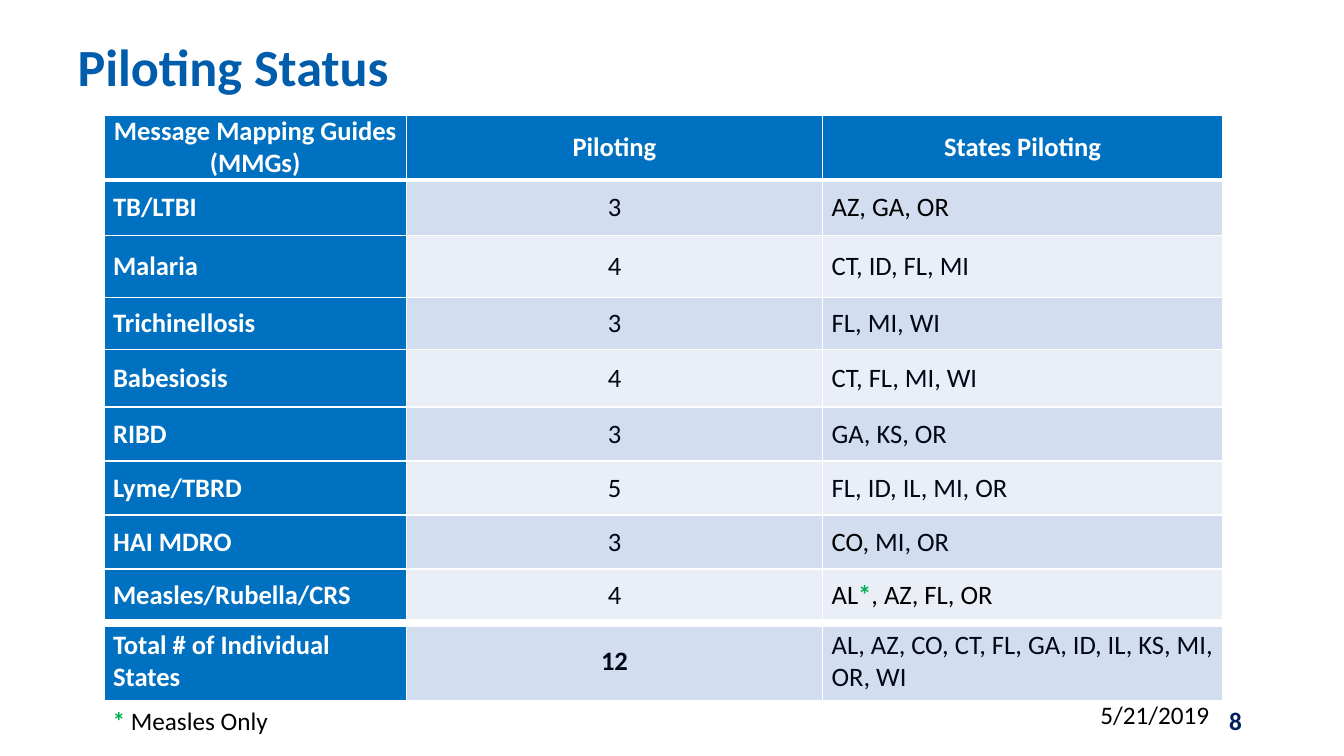
from lxml.etree import SubElement
from pptx import Presentation
from pptx.dml.color import RGBColor
from pptx.enum.text import MSO_ANCHOR, MSO_AUTO_SIZE, PP_ALIGN
from pptx.oxml.ns import qn
from pptx.util import Cm, Pt

HUES = {
    "title": "005DAB", "head": "0070C0", "odd": "D2DEEF", "even": "EAEFF7",
    "white": "FFFFFF", "black": "000000", "ink": "000818",
    "star": "00B050", "navy": "002060",
}
HEADS = ["Message Mapping Guides (MMGs)", "Piloting", "States Piloting"]
GUIDES = [
    ("TB/LTBI", "3", [("AZ, GA, OR", "black", False)]),
    ("Malaria", "4", [("CT, ID, FL, MI", "ink", False)]),
    ("Trichinellosis", "3", [("FL, MI, WI", "ink", False)]),
    ("Babesiosis", "4", [("CT, FL, MI, WI", "ink", False)]),
    ("RIBD", "3", [("GA, KS, OR", "ink", False)]),
    ("Lyme/TBRD", "5", [("FL, ID, IL, MI, OR", "ink", False)]),
    ("HAI MDRO", "3", [("CO, ", "black", False), ("MI, OR", "ink", False)]),
    ("Measles/Rubella/CRS", "4", [
        ("AL", "black", False), ("*", "star", True), (", AZ, FL, OR", "black", False)]),
    ("Total # of Individual States", "12", [
        ("AL, AZ, CO, CT, FL, GA, ID, IL, KS, MI, OR, WI", "ink", False)]),
]
WIDTHS = [7.62, 10.49, 10.08]
HEIGHTS = [1.53, 1.4, 1.57, 1.32, 1.44, 1.36, 1.36, 1.36, 1.36, 1.96]


def color(name):
    """Return the named colour."""
    return RGBColor.from_string(HUES[name])


def write(frame, runs, size, align=PP_ALIGN.LEFT):
    """Fill the first paragraph with (text, colour, bold) runs."""
    para = frame.paragraphs[0]
    para.alignment = align
    for text, hue, bold in runs:
        run = para.add_run()
        run.text = text
        font = run.font
        font.name, font.size, font.bold = "Calibri", Pt(size), bold
        font.color.rgb = color(hue)
    return para


def add_title(slide, text):
    """Place and format the title placeholder."""
    title = slide.shapes.title
    title.left, title.top, title.width, title.height = Cm(1.7), Cm(0.76), Cm(30.48), Cm(1.8)
    frame = title.text_frame
    frame.auto_size = MSO_AUTO_SIZE.NONE
    frame.vertical_anchor = MSO_ANCHOR.BOTTOM
    write(frame, [(text, "title", True)], 37.3).line_spacing = Pt(40)


def add_note(slide, left, top, width, runs, align=PP_ALIGN.LEFT, anchor=MSO_ANCHOR.TOP):
    """Add a one-line text box at the foot of the slide."""
    box = slide.shapes.add_textbox(Cm(left), Cm(top), Cm(width), Cm(1.02))
    frame = box.text_frame
    frame.word_wrap = True
    frame.vertical_anchor = anchor
    write(frame, runs, 18, align)


def add_edges(cell, top, bottom):
    """Draw white cell borders with the given top and bottom widths."""
    props = cell._tc.get_or_add_tcPr()
    for side, width in (("L", 1), ("R", 1), ("T", top), ("B", bottom)):
        line = SubElement(props, qn(f"a:ln{side}"), w=str(Pt(width)))
        fill = SubElement(line, qn("a:solidFill"))
        SubElement(fill, qn("a:srgbClr"), val=HUES["white"])


def fill_cell(cell, runs, hue, align, top, bottom):
    """Set the text, borders and fill of a cell."""
    cell.margin_left = cell.margin_right = Cm(0.23)
    cell.margin_top = cell.margin_bottom = 0
    cell.vertical_anchor = MSO_ANCHOR.MIDDLE
    write(cell.text_frame, runs, 19, align)
    add_edges(cell, top, bottom)
    cell.fill.solid()
    cell.fill.fore_color.rgb = color(hue)


def add_grid(slide):
    """Add the table of guides and piloting states."""
    rows = [[[(head, "white", True)] for head in HEADS]]
    last = len(GUIDES)
    for num, (guide, count, states) in enumerate(GUIDES, 1):
        rows.append([[(guide, "white", True)], [(count, "ink", num == last)], states])
    table = slide.shapes.add_table(
        len(rows), len(HEADS), Cm(2.62), Cm(2.9), Cm(sum(WIDTHS)), Cm(sum(HEIGHTS))).table
    for col, width in zip(table.columns, WIDTHS):
        col.width = Cm(width)
    rules = {1: 3, last: 6}
    for y, row in enumerate(rows):
        table.rows[y].height = Cm(HEIGHTS[y])
        band = "odd" if y % 2 else "even"
        for x, runs in enumerate(row):
            hue = "head" if y == 0 or x == 0 else band
            align = PP_ALIGN.CENTER if y == 0 or x == 1 else PP_ALIGN.LEFT
            fill_cell(table.cell(y, x), runs, hue, align, rules.get(y, 1), rules.get(y + 1, 1))


def main():
    """Build and save the slide."""
    deck = Presentation()
    deck.slide_width, deck.slide_height = Cm(33.87), Cm(19.05)
    slide = deck.slides.add_slide(deck.slide_layouts[5])
    add_title(slide, "Piloting Status")
    add_grid(slide)
    add_note(slide, 27.48, 17.5, 4.27, [("5/21/2019", "black", False)])
    add_note(slide, 23.93, 17.65, 7.62, [("8", "navy", True)], PP_ALIGN.RIGHT, MSO_ANCHOR.MIDDLE)
    add_note(slide, 2.59, 17.65, 4.8, [("*", "star", True), (" Measles Only", "black", False)])
    deck.save("out.pptx")


if __name__ == "__main__":
    main()
